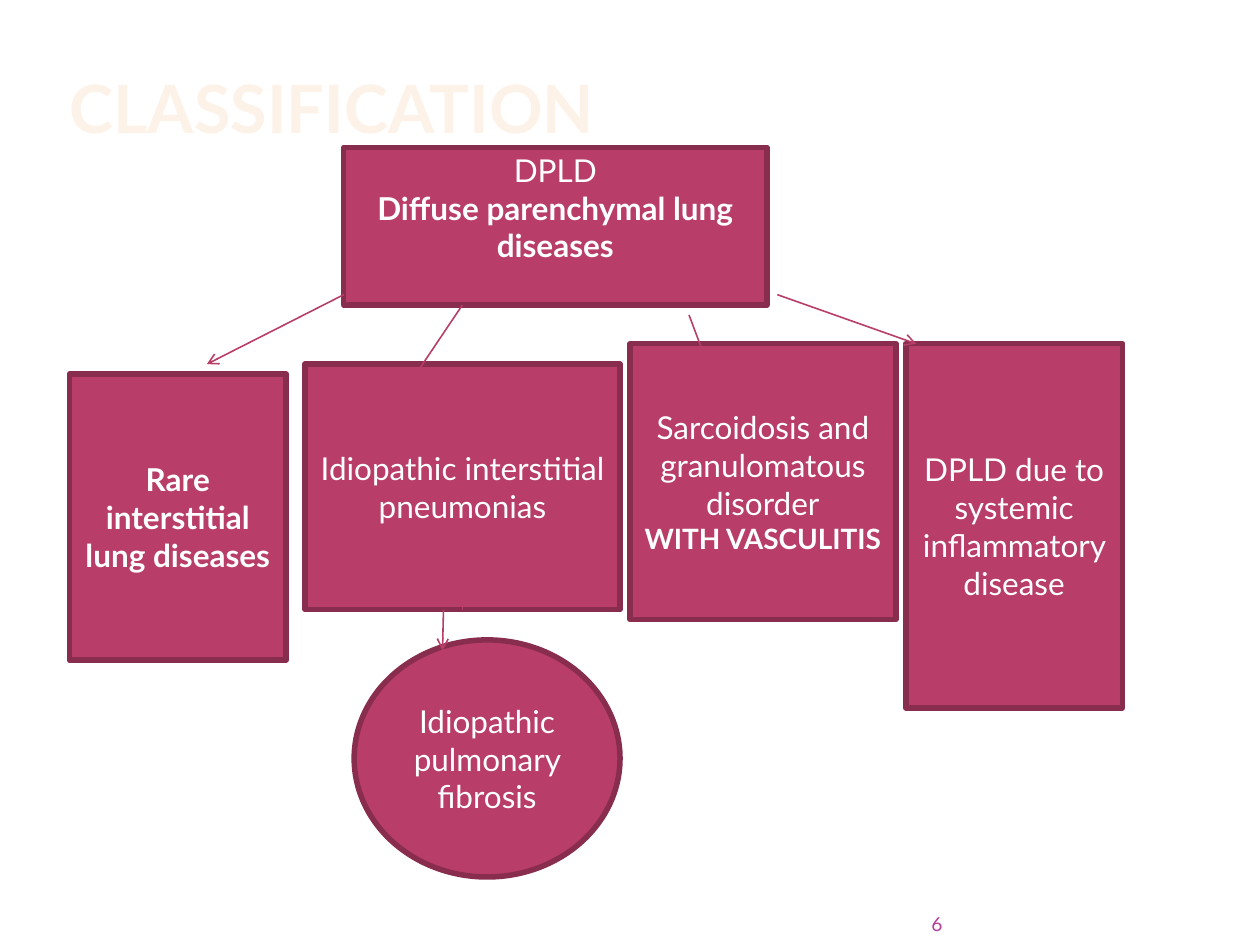
from lxml import etree
from pptx import Presentation
from pptx import util as u
from pptx.dml.color import RGBColor
from pptx.enum import shapes, text
from pptx.oxml import ns

ROSE = RGBColor(0xB8, 0x3D, 0x68)
WINE = RGBColor(0x88, 0x2D, 0x4D)
CREAM = RGBColor(0xFD, 0xF2, 0xE8)
PURPLE = RGBColor(0xB1, 0x3F, 0x9A)
WHITE = RGBColor(0xFF, 0xFF, 0xFF)
RECT = shapes.MSO_SHAPE.RECTANGLE
OVAL = shapes.MSO_SHAPE.OVAL
LEFT, CENTER, RIGHT = text.PP_ALIGN.LEFT, text.PP_ALIGN.CENTER, text.PP_ALIGN.RIGHT
TOP, MIDDLE, BOTTOM = text.MSO_ANCHOR.TOP, text.MSO_ANCHOR.MIDDLE, text.MSO_ANCHOR.BOTTOM


class Diagram:
    font = "Lato"

    def __init__(self, prs):
        self.s = prs.slides.add_slide(prs.slide_layouts[5])

    def add_run(self, p, content, size, color, bold=False):
        r = p.add_run()
        r.text = content
        r.font.name = self.font
        r.font.size = u.Pt(size)
        r.font.bold = bold
        r.font.color.rgb = color

    def frame(self, sp, anchor, side, top):
        tf = sp.text_frame
        tf.word_wrap = True
        tf.auto_size = text.MSO_AUTO_SIZE.NONE
        tf.vertical_anchor = anchor
        tf.margin_left = tf.margin_right = u.Cm(side)
        tf.margin_top = tf.margin_bottom = u.Cm(top)
        return tf

    def title(self, content, left, top, width, height):
        sp = self.s.shapes.title
        sp.left, sp.top, sp.width, sp.height = map(u.Cm, (left, top, width, height))
        p = self.frame(sp, BOTTOM, 0.13, 0).paragraphs[0]
        p.alignment = LEFT
        self.add_run(p, content, 38, CREAM, True)

    def box(self, lines, left, top, width, height, kind=RECT, anchor=MIDDLE, inset=0.13):
        sp = self.s.shapes.add_shape(kind, *map(u.Cm, (left, top, width, height)))
        sp.shadow.inherit = False
        sp.fill.solid()
        sp.fill.fore_color.rgb = ROSE
        sp.line.color.rgb = WINE
        sp.line.width = u.Pt(3.15)
        tf = self.frame(sp, anchor, 0.25, inset)
        for i, (content, size, bold) in enumerate(lines):
            p = tf.add_paragraph() if i else tf.paragraphs[0]
            p.alignment = CENTER
            self.add_run(p, content, size, WHITE, bold)

    def arrow(self, x1, y1, x2, y2):
        c = self.s.shapes.add_connector(
            shapes.MSO_CONNECTOR.STRAIGHT, *map(u.Cm, (x1, y1, x2, y2)))
        c.line.color.rgb = ROSE
        c.line.width = u.Pt(0.9)
        etree.SubElement(c.line._get_or_add_ln(), ns.qn("a:tailEnd"), type="arrow")
        etree.SubElement(c._element.spPr, ns.qn("a:effectLst"))

    def page_number(self, content, left, top, width, height):
        sp = self.s.shapes.add_textbox(*map(u.Cm, (left, top, width, height)))
        p = self.frame(sp, BOTTOM, 0, 0).paragraphs[0]
        p.alignment = RIGHT
        self.add_run(p, content, 11, PURPLE)


def main():
    prs = Presentation()
    prs.slide_width, prs.slide_height = u.Cm(25.4), u.Cm(19.05)
    d = Diagram(prs)
    d.title("CLASSIFICATION", 1.27, 0.89, 20.12, 2.08)
    d.box([("DPLD", 18, False), ("Diffuse parenchymal lung diseases", 18, True)],
          6.93, 2.97, 8.53, 3.18, anchor=TOP, inset=0.07)
    d.box([("Idiopathic interstitial pneumonias", 18, False)], 6.15, 7.34, 6.35, 4.95)
    d.box([("Sarcoidosis and granulomatous disorder", 18, False),
           ("WITH VASCULITIS", 16, True)], 12.7, 6.93, 5.36, 5.56)
    d.box([("DPLD due to systemic inflammatory disease", 18, False)], 18.26, 6.93, 4.37, 7.34)
    d.box([("Rare interstitial lung diseases", 18, True)], 1.4, 7.54, 4.37, 5.77)
    for ends in [(15.67, 5.94, 18.47, 6.93), (13.89, 6.35, 14.48, 7.92),
                 (9.32, 6.15, 8.13, 7.92), (6.93, 5.94, 4.17, 7.34),
                 (9.32, 12.29, 9.32, 11.3)]:
        d.arrow(*ends)
    d.box([("Idiopathic pulmonary fibrosis", 18, False)], 7.14, 12.9, 5.36, 4.78, kind=OVAL)
    d.arrow(8.94, 12.29, 8.92, 13.11)
    d.page_number("6", 17.37, 18.21, 1.63, 0.64)
    prs.save("out.pptx")


if __name__ == "__main__":
    main()
